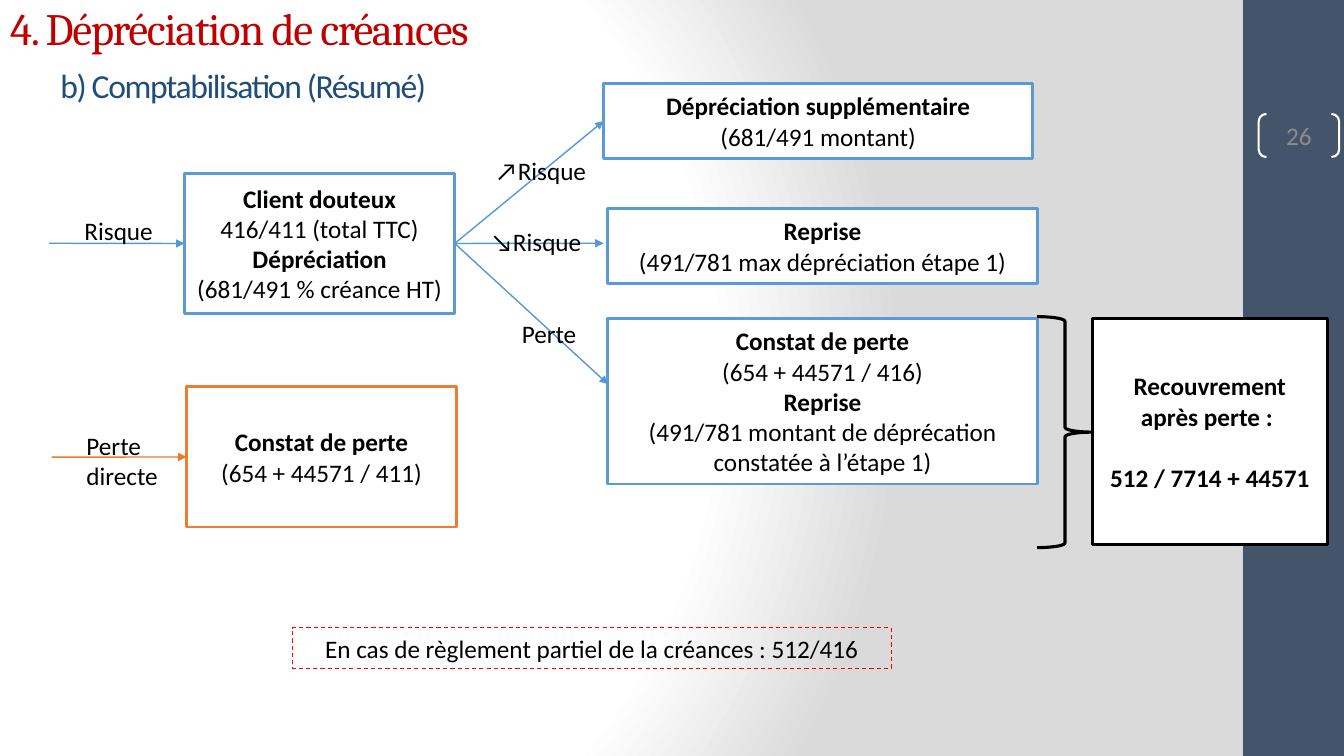
from dataclasses import dataclass

from lxml.etree import SubElement
from pptx import Presentation
from pptx.dml.color import RGBColor as RGB
from pptx.enum.dml import MSO_LINE as Dash
from pptx.enum.shapes import MSO_CONNECTOR as Link, MSO_SHAPE as Kind
from pptx.enum.text import MSO_ANCHOR as Anchor, MSO_AUTO_SIZE as Fit, PP_ALIGN as Align
from pptx.oxml import parse_xml
from pptx.oxml.ns import nsdecls, qn
from pptx.util import Cm, Pt


@dataclass(frozen=True)
class Theme:
    white: str = "FFFFFF"
    black: str = "000000"
    fade: str = "DADADA"
    band: str = "44546A"
    page: str = "8C8C8C"
    blue: str = "5B9BD5"
    flow: str = "5698D3"
    orange: str = "ED7D31"
    loss: str = "EC792B"
    red: str = "FF0000"
    title: str = "C00000"
    sub: str = "1F4E79"
    head: str = "Cambria"
    body: str = "Calibri"
    big: int = 32
    mid: int = 24
    text: int = 18


T = Theme()
LEFT, RIGHT = 1, 3


def style(run, color=T.black, size=T.text, face=T.body, bold=False):
    font = run.font
    font.name, font.size, font.bold = face, Pt(size), bold
    font.color.rgb = RGB.from_string(color)


def shape(slide, kind, place, fill=None, line=None, width=2):
    item = slide.shapes.add_shape(kind, *map(Cm, place))
    item.shadow.inherit = False
    if fill:
        item.fill.solid()
        item.fill.fore_color.rgb = RGB.from_string(fill)
    else:
        item.fill.background()
    if line:
        item.line.color.rgb = RGB.from_string(line)
        item.line.width = Pt(width)
    else:
        item.line.fill.background()
    return item


def card(slide, place, lines, line=T.blue, bold=False, gap=0):
    """Box whose headings, every other line, are bold; bold makes all lines so."""
    box = shape(slide, Kind.RECTANGLE, place, T.white, line)
    frame = box.text_frame
    frame.text = "\n".join(lines)
    for i, para in enumerate(frame.paragraphs):
        para.alignment = Align.CENTER
        if i:
            para.space_before = Pt(gap)
        style(para.runs[0], bold=bold or i % 2 == 0)
    return box


def label(slide, place, text):
    frame = slide.shapes.add_textbox(*map(Cm, place)).text_frame
    frame.word_wrap = True
    frame.text = text
    style(frame.paragraphs[0].runs[0])


def arrow(slide, color, start, end):
    """Arrow between two ends, each a card or an (x, y) point in cm."""
    ends = [(0, 0) if hasattr(e, "shape_id") else e for e in (start, end)]
    line = slide.shapes.add_connector(Link.STRAIGHT, *(Cm(v) for e in ends for v in e))
    if hasattr(start, "shape_id"):
        line.begin_connect(start, RIGHT)
    if hasattr(end, "shape_id"):
        line.end_connect(end, LEFT)
    line.line.color.rgb = RGB.from_string(color)
    line.line.width = Pt(1)
    SubElement(line.line._get_or_add_ln(), qn("a:tailEnd"), type="triangle")
    SubElement(line._element.spPr, qn("a:effectLst"))


def backdrop(slide):
    fill = slide.background.fill
    fill.solid()
    stops = "".join(
        f'<a:gs pos="{at * 1000}"><a:srgbClr val="{color}"/></a:gs>'
        for at, color in ((0, T.white), (75, T.white), (100, T.fade)))
    old = slide._element.find(".//" + qn("a:solidFill"))
    old.getparent().replace(old, parse_xml(
        f'<a:gradFill {nsdecls("a")} rotWithShape="1"><a:gsLst>{stops}</a:gsLst>'
        '<a:path path="circle"><a:fillToRect l="20000" t="50000" r="100000" b="50000"/>'
        '</a:path></a:gradFill>'))


def heading(slide):
    box = slide.shapes.title
    box.left, box.top, box.width, box.height = map(Cm, (0, 0.56, 28.45, 1.6))
    frame = box.text_frame
    frame.auto_size, frame.vertical_anchor = Fit.NONE, Anchor.MIDDLE
    frame.text = "4. Dépréciation de créances\n\t"
    top, sub = frame.paragraphs
    sub.add_run().text = "b) Comptabilisation (Résumé)"
    for para in (top, sub):
        para.alignment = Align.LEFT
        style(para.runs[0], T.title, T.big, T.head)
    style(sub.runs[1], T.sub, T.mid)
    for run in (*top.runs, *sub.runs):
        run.font._element.set("spc", "-100")


def margin(slide):
    """Side band with the page number between brackets."""
    shape(slide, Kind.RECTANGLE, (31.33, 0, 2.54, 19.05), T.band)
    mark = shape(slide, Kind.DOUBLE_BRACKET, (31.72, 2.87, 2.03, 1.09), None, T.white, 1.5)
    mark.adjustments[0] = 0.18
    frame = mark.text_frame
    frame.margin_left = frame.margin_right = frame.margin_top = frame.margin_bottom = 0
    frame.text = "26"
    frame.paragraphs[0].alignment = Align.CENTER
    style(frame.paragraphs[0].runs[0], T.page)


def note(slide):
    box = shape(slide, Kind.RECTANGLE, (7.37, 15.82, 15.09, 1.02), None, T.red, 0.75)
    box.line.dash_style = Dash.DASH
    frame = box.text_frame
    frame.text = "En cas de règlement partiel de la créances : 512/416"
    frame.paragraphs[0].alignment = Align.CENTER
    style(frame.paragraphs[0].runs[0])


def main():
    deck = Presentation()
    deck.slide_width, deck.slide_height = Cm(33.87), Cm(19.05)
    slide = deck.slides.add_slide(deck.slide_layouts[5])
    backdrop(slide)
    margin(slide)
    heading(slide)

    client = card(slide, (4.65, 4.37, 6.81, 3.53), (
        "Client douteux", "416/411 (total TTC)",
        "Dépréciation", "(681/491 % créance HT)"))
    direct = card(slide, (4.7, 9.75, 6.81, 3.53), (
        "Constat de perte", "(654 + 44571 / 411)"), T.orange)
    extra = card(slide, (15.21, 2.11, 10.82, 1.88), (
        "Dépréciation supplémentaire", "(681/491 montant)"))
    card(slide, (15.32, 5.26, 10.82, 1.88), (
        "Reprise", "(491/781 max dépréciation étape 1)"))
    card(slide, (15.32, 8.03, 10.82, 4.17), (
        "Constat de perte", "(654 + 44571 / 416)",
        "Reprise", "(491/781 montant de déprécation constatée à l’étape 1)"))
    shape(slide, Kind.RIGHT_BRACE, (26.14, 7.98, 1.4, 5.82), None, T.black, 2.25)
    card(slide, (27.53, 8.03, 5.92, 5.69), (
        "Recouvrement après perte : ", "512 / 7714 + 44571"), T.black, True, 22)

    arrow(slide, T.flow, (1.24, 6.13), client)
    arrow(slide, T.loss, (1.3, 11.52), direct)
    for end in (extra, (15.21, 6.13), (15.32, 9.68)):
        arrow(slide, T.flow, client, end)

    label(slide, (1.88, 5.31, 2.77, 1.04), "Risque")
    label(slide, (1.93, 10.72, 2.77, 1.8), "Perte directe")
    label(slide, (12.24, 3.78, 3.1, 1.02), "↗Risque")
    label(slide, (12.12, 5.59, 3.1, 1.02), "↘Risque")
    label(slide, (12.9, 7.9, 3.1, 1.02), "Perte")
    note(slide)
    deck.save("out.pptx")


if __name__ == "__main__":
    main()
